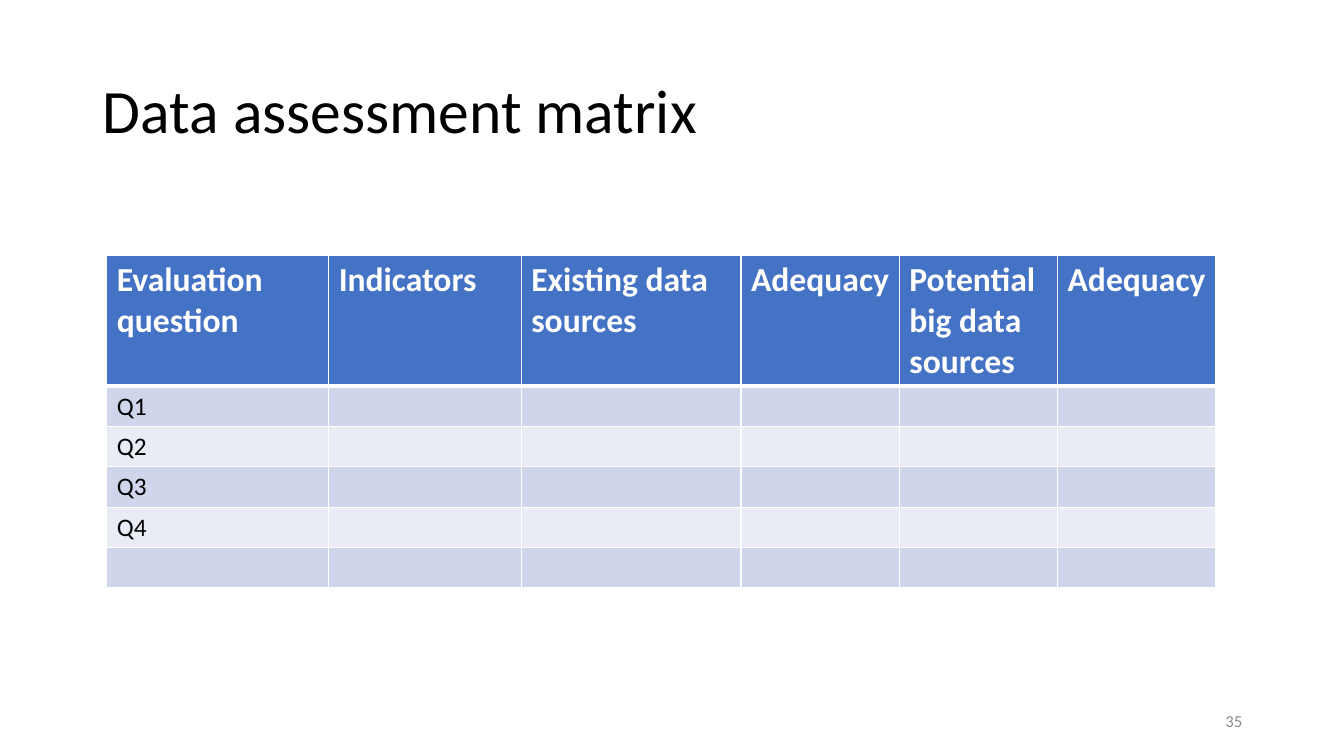
from lxml import etree
from pptx import Presentation, util as u
from pptx.dml.color import RGBColor
from pptx.enum import text
from pptx.oxml.ns import qn

COLORS = {"ink": "000000", "muted": "8C8C8C", "white": "FFFFFF",
          "header": "4472C4", "odd": "CFD5EA", "even": "E9EBF5"}
HEADINGS = ["Evaluation question", "Indicators", "Existing data sources",
            "Adequacy", "Potential big data sources", "Adequacy"]
QUESTIONS = ["Q1", "Q2", "Q3", "Q4", ""]
COLUMN_WIDTHS = [2.2, 1.91, 2.18, 1.57, 1.57, 1.57]
HEADER_HEIGHT, ROW_HEIGHT = 1.3, 0.4


def write(frame, content, size=18, color="ink", bold=False, align=None, spacing=None):
    """Write one formatted paragraph into a text frame."""
    para = frame.paragraphs[0]
    para.alignment = align
    para.line_spacing = spacing
    para.font.size = u.Pt(size)
    if content:
        span = para.add_run()
        span.text = content
        span.font.name = "Calibri"
        span.font.size = u.Pt(size)
        span.font.bold = bold
        span.font.color.rgb = RGBColor.from_string(COLORS[color])


class MatrixPage:
    """Hold the style and the current slide, and add its elements."""

    def __init__(self, deck):
        self.page = deck.slides.add_slide(deck.slide_layouts[5])

    def place(self, box, left, top, width, height):
        box.left, box.top = u.Inches(left), u.Inches(top)
        box.width, box.height = u.Inches(width), u.Inches(height)
        frame = box.text_frame
        frame.word_wrap = True
        frame.vertical_anchor = text.MSO_ANCHOR.MIDDLE
        return frame

    def title(self, content):
        frame = self.place(self.page.shapes.title, 0.92, 0.4, 11.5, 1.45)
        write(frame, content, size=44, align=text.PP_ALIGN.LEFT, spacing=0.9)

    def page_number(self, content):
        box = self.page.shapes.add_textbox(0, 0, 0, 0)
        frame = self.place(box, 9.42, 6.95, 3, 0.4)
        write(frame, content, size=12, color="muted", align=text.PP_ALIGN.RIGHT)

    def borders(self, cell, **widths):
        properties = cell._tc.get_or_add_tcPr()
        for side in "LRTB":
            line = etree.SubElement(properties, qn(f"a:ln{side}"), w=str(u.Pt(widths.get(side, 1))))
            fill = etree.SubElement(line, qn("a:solidFill"))
            etree.SubElement(fill, qn("a:srgbClr"), val=COLORS["white"])

    def cell(self, cell, content, fill, borders, **style):
        self.borders(cell, **borders)
        cell.fill.solid()
        cell.fill.fore_color.rgb = RGBColor.from_string(COLORS[fill])
        write(cell.text_frame, content, **style)

    def matrix(self, headings, questions):
        count = len(questions) + 1
        height = HEADER_HEIGHT + ROW_HEIGHT * len(questions)
        table = self.page.shapes.add_table(
            count, len(headings), u.Inches(1.06), u.Inches(2.53),
            u.Inches(sum(COLUMN_WIDTHS)), u.Inches(height)).table
        for column, width in zip(table.columns, COLUMN_WIDTHS):
            column.width = u.Inches(width)
        for index, row in enumerate(table.rows):
            row.height = u.Inches(ROW_HEIGHT if index else HEADER_HEIGHT)
        for index, heading in enumerate(headings):
            self.cell(table.cell(0, index), heading, "header", {"B": 3},
                      size=24, color="white", bold=True)
        for row, question in enumerate(questions, 1):
            for column in range(len(headings)):
                self.cell(table.cell(row, column), "" if column else question,
                          "odd" if row % 2 else "even", {"T": 3} if row == 1 else {})


def main():
    """Build and save the data assessment slide."""
    deck = Presentation()
    deck.slide_width, deck.slide_height = u.Inches(13.33), u.Inches(7.5)
    slide = MatrixPage(deck)
    slide.title("Data assessment matrix")
    slide.page_number("35")
    slide.matrix(HEADINGS, QUESTIONS)
    deck.save("out.pptx")


if __name__ == "__main__":
    main()
